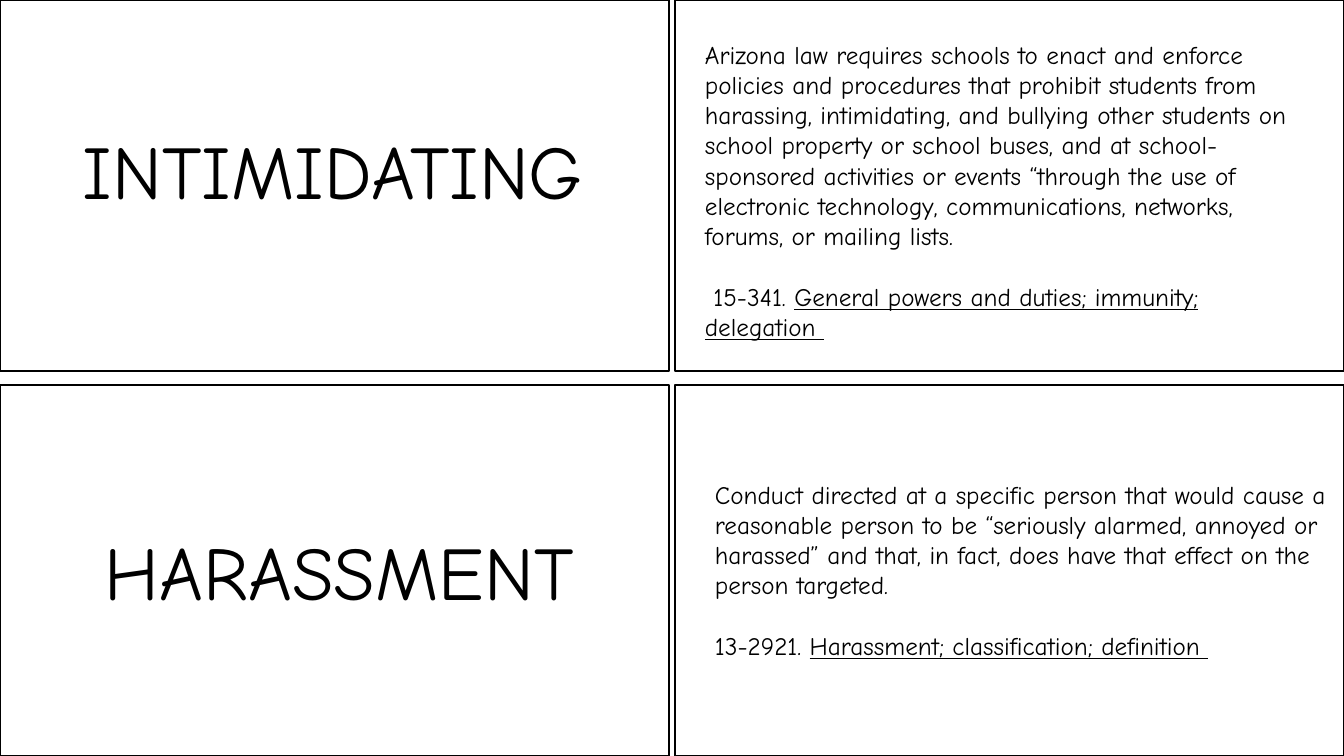
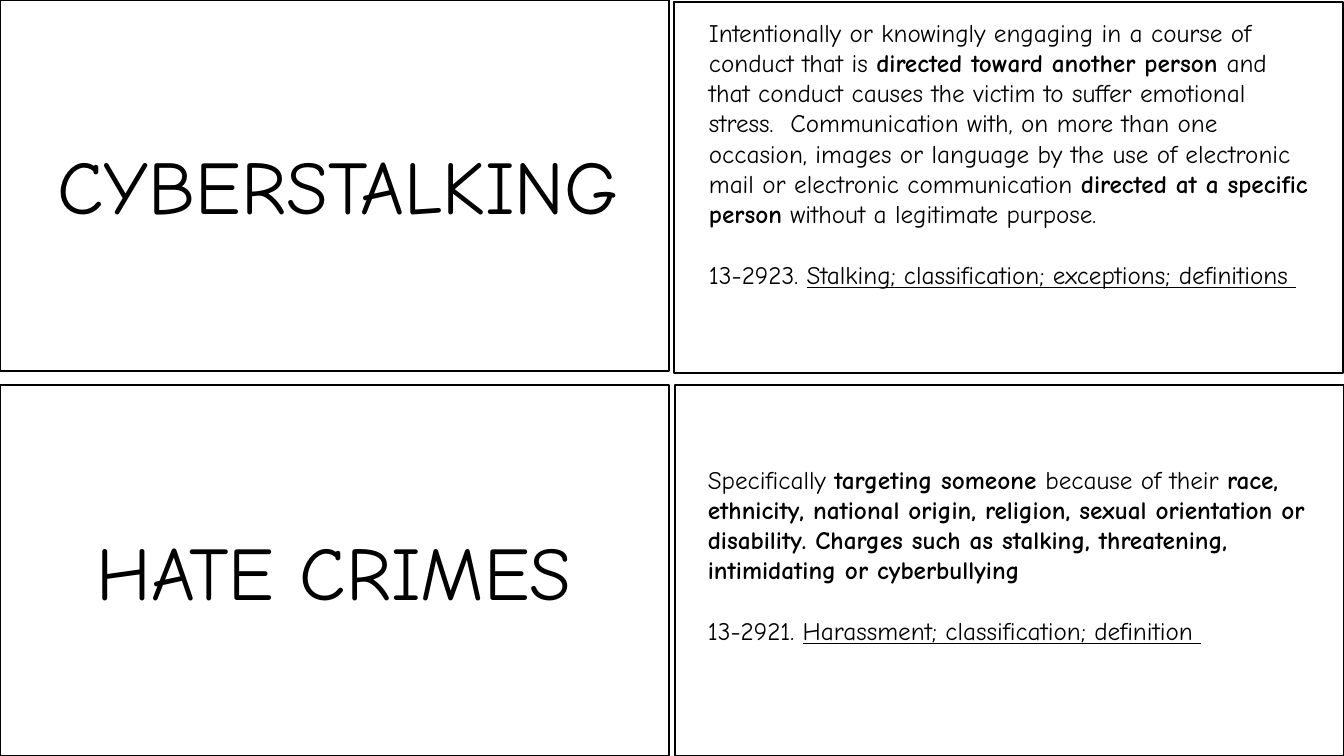
from dataclasses import dataclass

from pptx import Presentation
from pptx.dml.color import RGBColor
from pptx.enum.shapes import MSO_SHAPE
from pptx.enum.text import MSO_AUTO_SIZE, PP_ALIGN
from pptx.util import Emu, Pt

WIDE, HIGH = 1344, 756
SCALE = 12192000 / WIDE
FONT = "Comic Neue"
INK, PAPER = "000000", "FFFFFF"
CARD_W, CARD_H = 669, 371
LEFT, RIGHT = 0, WIDE - CARD_W
TOP, LOW = 0, HIGH - CARD_H
TERM_H = 102
TERM_PT, BODY_PT, GAP_PT = 54, 18, 21.6


@dataclass(frozen=True)
class Box:
    x: int
    y: int
    w: int
    h: int


@dataclass(frozen=True)
class Run:
    text: str
    bold: bool = False
    under: bool = False


@dataclass(frozen=True)
class Entry:
    term: str
    term_at: Box
    body: tuple[Run, ...]
    code: str
    law: str
    body_at: Box
    back: tuple[int, int]


def px(num: int) -> Emu:
    return Emu(round(num * SCALE))


def place(box: Box) -> tuple[Emu, ...]:
    return px(box.x), px(box.y), px(box.w), px(box.h)


def color(code: str) -> RGBColor:
    return RGBColor.from_string(code)


def add_card(slide, x: int, y: int) -> None:
    card = slide.shapes.add_shape(
        MSO_SHAPE.RECTANGLE, *place(Box(x, y, CARD_W, CARD_H)))
    card.shadow.inherit = False
    card.fill.solid()
    card.fill.fore_color.rgb = color(PAPER)
    card.line.color.rgb = color(INK)
    card.line.width = Pt(1)


def add_frame(slide, box: Box):
    frame = slide.shapes.add_textbox(*place(box)).text_frame
    frame.word_wrap = True
    frame.auto_size = MSO_AUTO_SIZE.SHAPE_TO_FIT_TEXT
    return frame


def add_runs(para, runs: tuple[Run, ...], size: int) -> None:
    for item in runs:
        run = para.add_run()
        run.text = item.text
        font = run.font
        font.name = FONT
        font.size = Pt(size)
        font.color.rgb = color(INK)
        font.bold = item.bold
        font.underline = item.under


def add_term(slide, entry: Entry) -> None:
    para = add_frame(slide, entry.term_at).paragraphs[0]
    para.alignment = PP_ALIGN.CENTER
    add_runs(para, (Run(entry.term),), TERM_PT)


def add_body(slide, entry: Entry) -> None:
    frame = add_frame(slide, entry.body_at)
    add_runs(frame.paragraphs[0], entry.body, BODY_PT)
    cite = frame.add_paragraph()
    cite.space_before = Pt(GAP_PT)
    add_runs(cite, (Run(entry.code), Run(entry.law, under=True)), BODY_PT)


PAGES = (
    (
        Entry(
            "INTIMIDATING", Box(-1, 119, 668, TERM_H),
            (Run("Arizona law requires schools to enact and enforce policies "
                 "and procedures that prohibit students from harassing, "
                 "intimidating, and bullying other students on school "
                 "property or school buses, and at school-sponsored "
                 "activities or events “through the use of electronic "
                 "technology, communications, networks, forums, or mailing "
                 "lists."),),
            " 15-341. ", "General powers and duties; immunity; delegation ",
            Box(695, 34, 622, 316), (RIGHT, TOP)),
        Entry(
            "HARASSMENT", Box(10, 520, 658, TERM_H),
            (Run("Conduct directed at a specific person that would cause a "
                 "reasonable person to be “seriously alarmed, annoyed or "
                 "harassed” and that, in fact, does have that effect on the "
                 "person targeted."),),
            "13-2921. ", "Harassment; classification; definition ",
            Box(705, 474, 646, 194), (RIGHT, LOW)),
    ),
    (
        Entry(
            "CYBERSTALKING", Box(8, 134, 660, TERM_H),
            (Run("Intentionally or knowingly engaging in a course of conduct "
                 "that is "),
             Run("directed toward another person ", bold=True),
             Run("and that conduct causes the victim to suffer emotional "
                 "stress.  Communication with, on more than one occasion, "
                 "images or language by the use of electronic mail or "
                 "electronic communication "),
             Run("directed at a specific person", bold=True),
             Run(" without a legitimate purpose.")),
            "13-2923. ", "Stalking; classification; exceptions; definitions ",
            Box(699, 12, 622, 346), (RIGHT - 1, TOP + 2)),
        Entry(
            "HATE CRIMES", Box(17, 520, 634, TERM_H),
            (Run("Specifically "),
             Run("targeting someone ", bold=True),
             Run("because of their "),
             Run("race, ethnicity, national origin, religion, sexual "
                 "orientation or disability. Charges such as stalking, "
                 "threatening, intimidating or cyberbullying", bold=True)),
            "13-2921. ", "Harassment; classification; definition ",
            Box(698, 459, 646, 224), (RIGHT, LOW)),
    ),
)


def main() -> None:
    deck = Presentation()
    deck.slide_width, deck.slide_height = px(WIDE), px(HIGH)
    for page in PAGES:
        slide = deck.slides.add_slide(deck.slide_layouts[6])
        for entry, y in zip(page, (TOP, LOW)):
            add_card(slide, LEFT, y)
            add_card(slide, *entry.back)
            add_term(slide, entry)
            add_body(slide, entry)
    deck.save("out.pptx")


if __name__ == "__main__":
    main()
